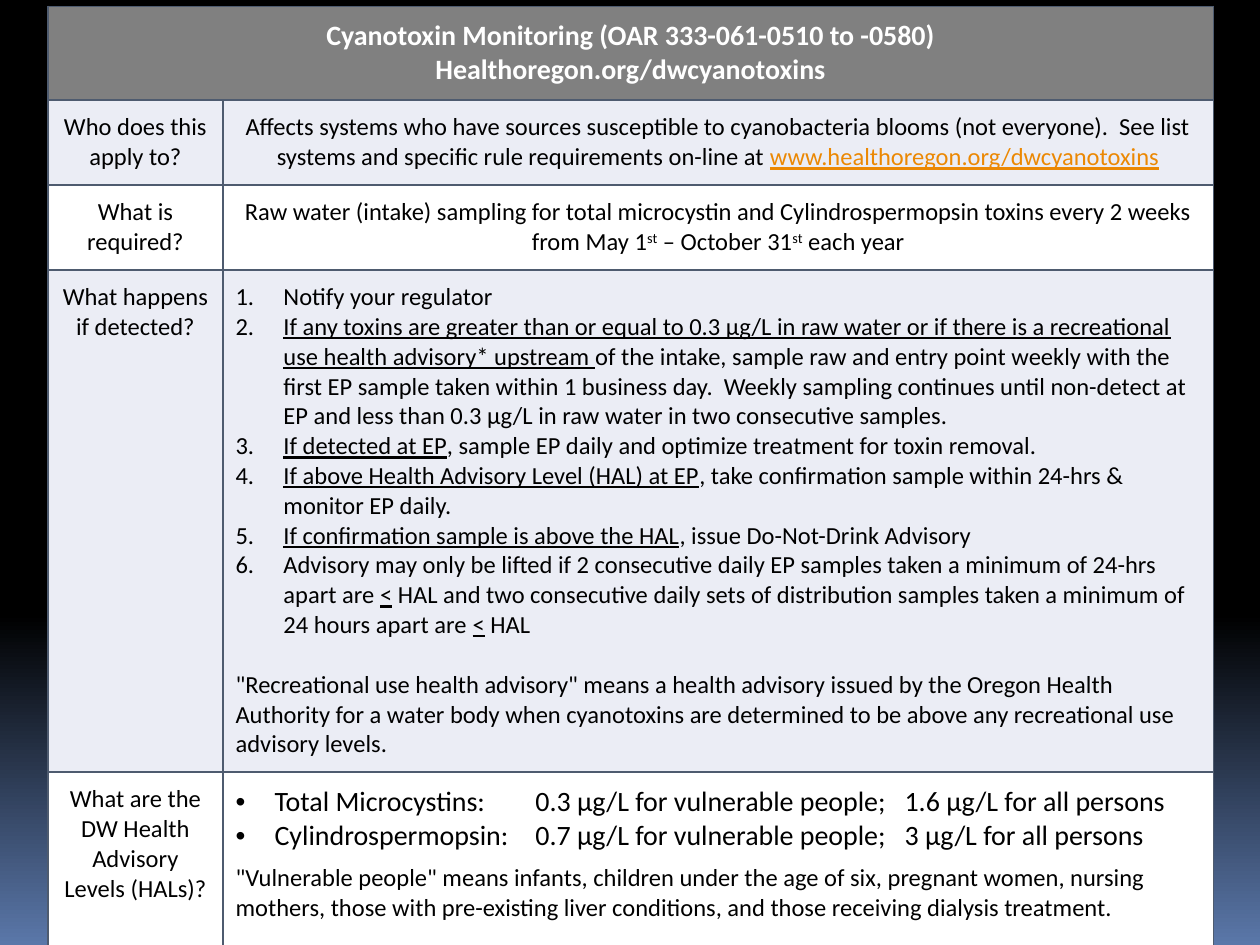
import pptx
import pptx.dml.color
import pptx.enum.text
import pptx.oxml
import pptx.oxml.ns
import pptx.util

COLORS = {
    "black": "000000", "sky": "5A77A9", "header": "808080", "band": "EBEDF5",
    "white": "FFFFFF", "border": "4E5B6F", "link": "EB8803",
}
COLUMNS = [1.39, 7.86]
ROWS = [0.73, 0.67, 0.67, 3.93, 1.39]
TABLE_BOX = (0.38, 0.05, sum(COLUMNS), sum(ROWS))
CELL_FORMAT = {
    f"margin_{side}": pptx.util.Inches(0.1) for side in ("left", "top", "right", "bottom")
}
CENTER = {"alignment": pptx.enum.text.PP_ALIGN.CENTER}
LEFT = {"alignment": pptx.enum.text.PP_ALIGN.LEFT}
UNDERLINE = {"underline": True}
LINK = {"underline": True, "color": "link"}
RAISED = {"baseline": "30000"}
HEADING = {"size": 16, "bold": True, "color": "white"}
LARGE = {"size": 16}

TITLE = ["Cyanotoxin Monitoring (OAR 333-061-0510 to -0580)", "Healthoregon.org/dwcyanotoxins"]
QUESTIONS = [
    "Who does this apply to?",
    "What is required?",
    "What happens if detected?",
    "What are the DW Health Advisory Levels (HALs)?",
]
APPLIES = [
    ("Affects systems who have sources susceptible to cyanobacteria blooms (not everyone).  "
     "See list systems and specific rule requirements on-line at ", {}),
    ("www.healthoregon.org/dwcyanotoxins", LINK),
]
REQUIRED = [
    ("Raw water (intake) sampling for total microcystin and Cylindrospermopsin toxins "
     "every 2 weeks from May 1", {}),
    ("st", RAISED), (" – October 31", {}), ("st", RAISED), (" each year", {}),
]
STEPS = [
    [("Notify your regulator", {})],
    [("If any toxins are greater than or equal to 0.3 µg/L in raw water or if there is a "
      "recreational use health advisory* upstream ", UNDERLINE),
     ("of the intake, sample raw and entry point weekly with the first EP sample taken within "
      "1 business day.  Weekly sampling continues until non-detect at EP and less than 0.3 µg/L "
      "in raw water in two consecutive samples.", {})],
    [("If detected at EP", UNDERLINE),
     (", sample EP daily and optimize treatment for toxin removal.", {})],
    [("If above Health Advisory Level (HAL) at EP", UNDERLINE),
     (", take confirmation sample within 24-hrs & monitor EP daily.", {})],
    [("If confirmation sample is above the HAL", UNDERLINE),
     (", issue Do-Not-Drink Advisory", {})],
    [("Advisory may only be lifted if 2 consecutive daily EP samples taken a minimum of 24-hrs "
      "apart are ", {}), ("<", UNDERLINE),
     (" HAL and two consecutive daily sets of distribution samples taken a minimum of 24 hours "
      "apart are ", {}), ("<", UNDERLINE), (" HAL", {})],
]
RECREATIONAL = (
    '"Recreational use health advisory" means a health advisory issued by the Oregon Health '
    "Authority for a water body when cyanotoxins are determined to be above any recreational "
    "use advisory levels."
)
LEVELS = [
    ("Total Microcystins:", "0.3 µg/L for vulnerable people;", "1.6 µg/L for all persons"),
    ("Cylindrospermopsin:", "0.7 µg/L for vulnerable people;", "3 µg/L for all persons"),
]
LEVEL_TABS = [2.38, 5.31]
VULNERABLE = (
    '"Vulnerable people" means infants, children under the age of six, pregnant women, nursing '
    "mothers, those with pre-existing liver conditions, and those receiving dialysis treatment."
)


def rgb(name):
    return pptx.dml.color.RGBColor.from_string(COLORS[name])


def apply_format(target, values):
    for name, value in values.items():
        setattr(target, name, value)


def add_xml(parent, tag, body="", **attributes):
    listed = " ".join(f'{key}="{value}"' for key, value in attributes.items())
    space = pptx.oxml.ns.nsdecls("a")
    element = pptx.oxml.parse_xml(f"<a:{tag} {space} {listed}>{body}</a:{tag}>")
    parent.append(element)


def add_spans(para, spans):
    for text, style in spans:
        values = {"size": 14, "bold": False, "color": "black", **style}
        span = para.add_run()
        span.text = text
        color = values.pop("color")
        baseline = values.pop("baseline", None)
        values["size"] = pptx.util.Pt(values["size"])
        apply_format(span.font, {"name": "Calibri", **values})
        span.font.color.rgb = rgb(color)
        if baseline:
            span.font._element.set("baseline", baseline)


def set_bullet(para, indent, tag, tabs=(), **attributes):
    properties = para._p.get_or_add_pPr()
    margin = pptx.util.Inches(indent)
    properties.set("marL", str(margin))
    properties.set("indent", str(-margin))
    add_xml(properties, "buFont", typeface="Arial" if tag == "buChar" else "+mj-lt")
    add_xml(properties, tag, **attributes)
    if tabs:
        stops = "".join(f'<a:tab pos="{pptx.util.Inches(tab)}" algn="l"/>' for tab in tabs)
        add_xml(properties, "tabLst", stops)


def fill_cell(cell, fill, paragraphs):
    apply_format(cell, CELL_FORMAT)
    properties = cell._tc.get_or_add_tcPr()
    line = f'<a:solidFill><a:srgbClr val="{COLORS["border"]}"/></a:solidFill>'
    for side in ("lnL", "lnR", "lnT", "lnB"):
        add_xml(properties, side, line, w=pptx.util.Pt(1))
    cell.fill.solid()
    cell.fill.fore_color.rgb = rgb(fill)
    for index, (spans, layout, bullet) in enumerate(paragraphs):
        para = cell.text_frame.add_paragraph() if index else cell.text_frame.paragraphs[0]
        apply_format(para, layout)
        if bullet:
            set_bullet(para, **bullet)
        add_spans(para, spans)


def paint_background(page):
    fill = page.background.fill
    fill.gradient()
    fill.gradient_angle = 270
    for stop, position, color in zip(fill.gradient_stops, (0.65, 1), ("black", "sky")):
        stop.position = position
        stop.color.rgb = rgb(color)


def add_monitoring_table(page, box):
    frame = page.shapes.add_table(len(ROWS), len(COLUMNS), *map(pptx.util.Inches, box))
    table = frame.table
    for column, width in zip(table.columns, COLUMNS):
        column.width = pptx.util.Inches(width)
    for row, height in zip(table.rows, ROWS):
        row.height = pptx.util.Inches(height)
    table.cell(0, 0).merge(table.cell(0, 1))
    fill_cell(table.cell(0, 0), "header", [([(line, HEADING)], CENTER, None) for line in TITLE])

    numbered = {"indent": 0.38, "tag": "buAutoNum", "type": "arabicPeriod"}
    dotted = {"indent": 0.31, "tag": "buChar", "char": "•", "tabs": LEVEL_TABS}
    after_steps = {**LEFT, "space_before": pptx.util.Pt(17)}
    after_levels = {**LEFT, "space_before": pptx.util.Pt(6)}
    answers = [
        [(APPLIES, CENTER, None)],
        [(REQUIRED, CENTER, None)],
        [(step, LEFT, numbered) for step in STEPS]
        + [([(RECREATIONAL, {})], after_steps, None)],
        [([("\t".join(level), LARGE)], LEFT, dotted) for level in LEVELS]
        + [([(VULNERABLE, {})], after_levels, None)],
    ]
    for index, (question, answer) in enumerate(zip(QUESTIONS, answers), start=1):
        fill = "band" if index % 2 else "white"
        fill_cell(table.cell(index, 0), fill, [([(question, {})], CENTER, None)])
        fill_cell(table.cell(index, 1), fill, answer)


def main():
    deck = pptx.Presentation()
    apply_format(deck, {"slide_width": pptx.util.Inches(10), "slide_height": pptx.util.Inches(7.5)})
    page = deck.slides.add_slide(deck.slide_layouts[6])
    paint_background(page)
    add_monitoring_table(page, TABLE_BOX)
    deck.save("out.pptx")


if __name__ == "__main__":
    main()
